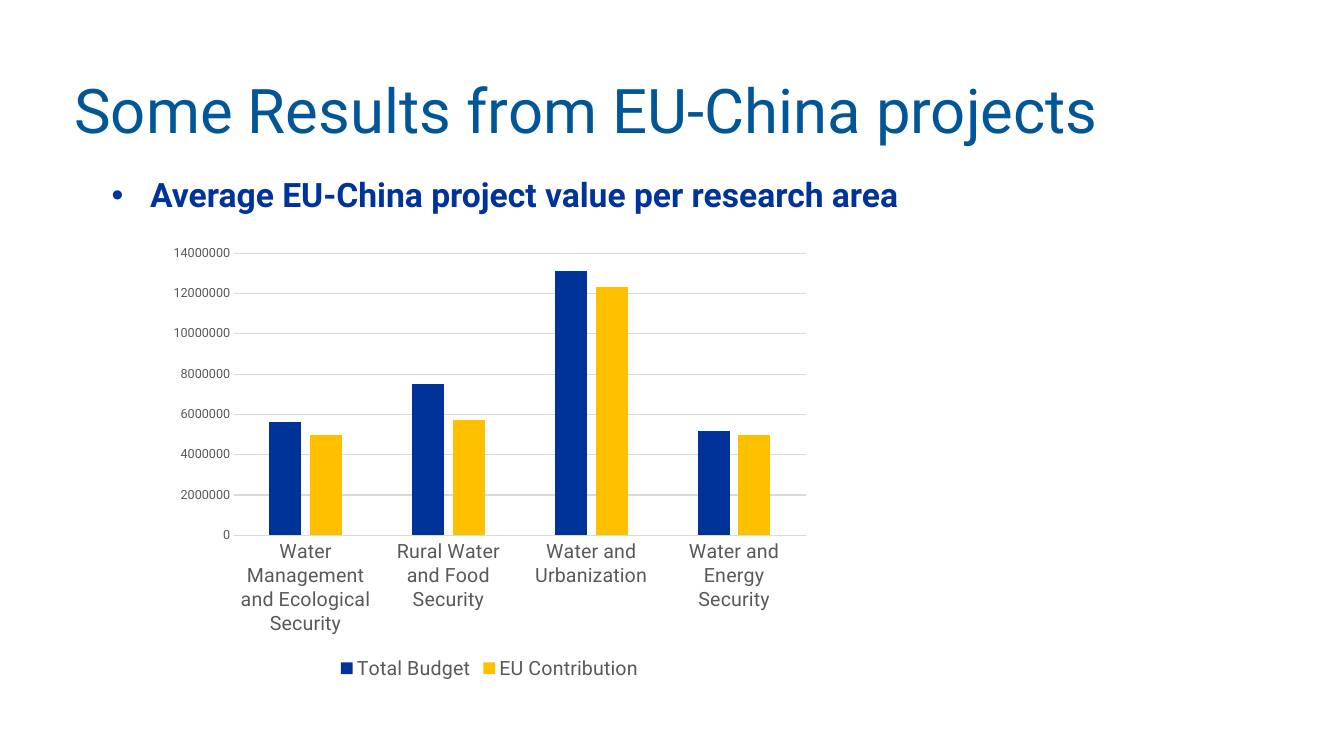
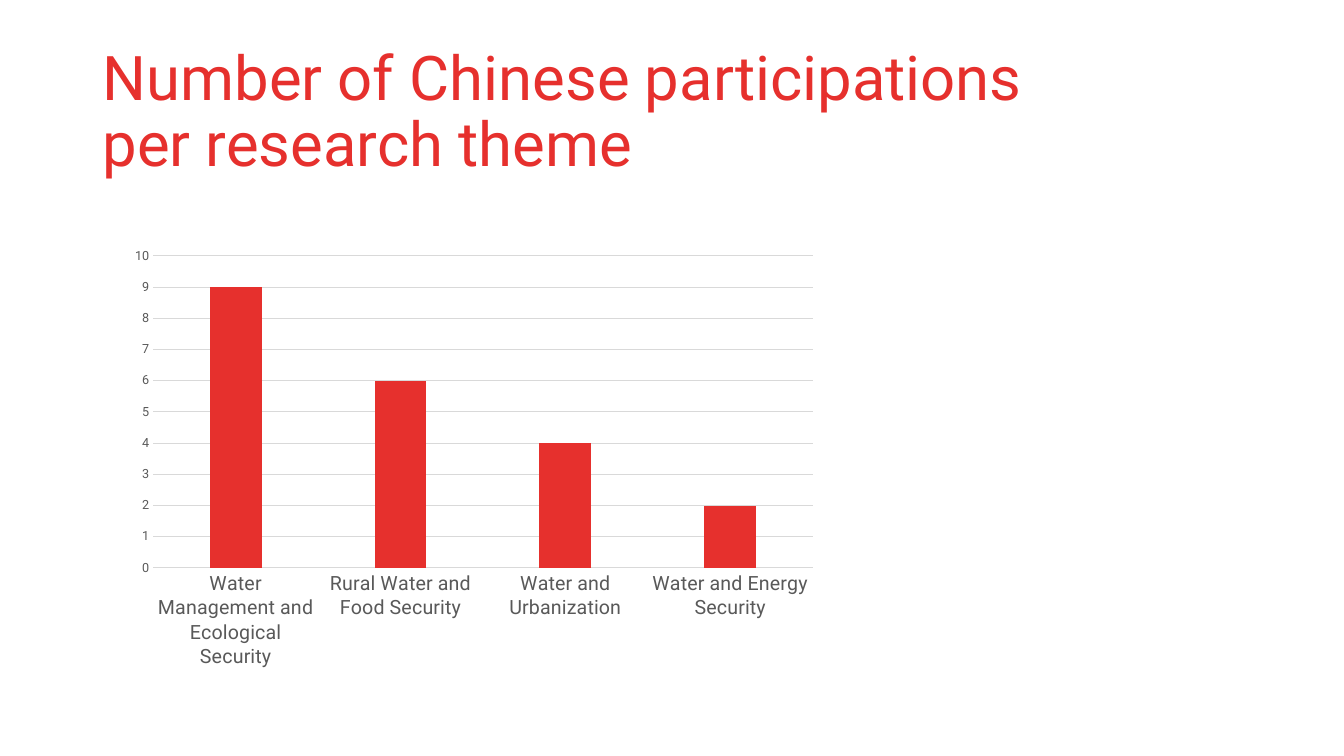
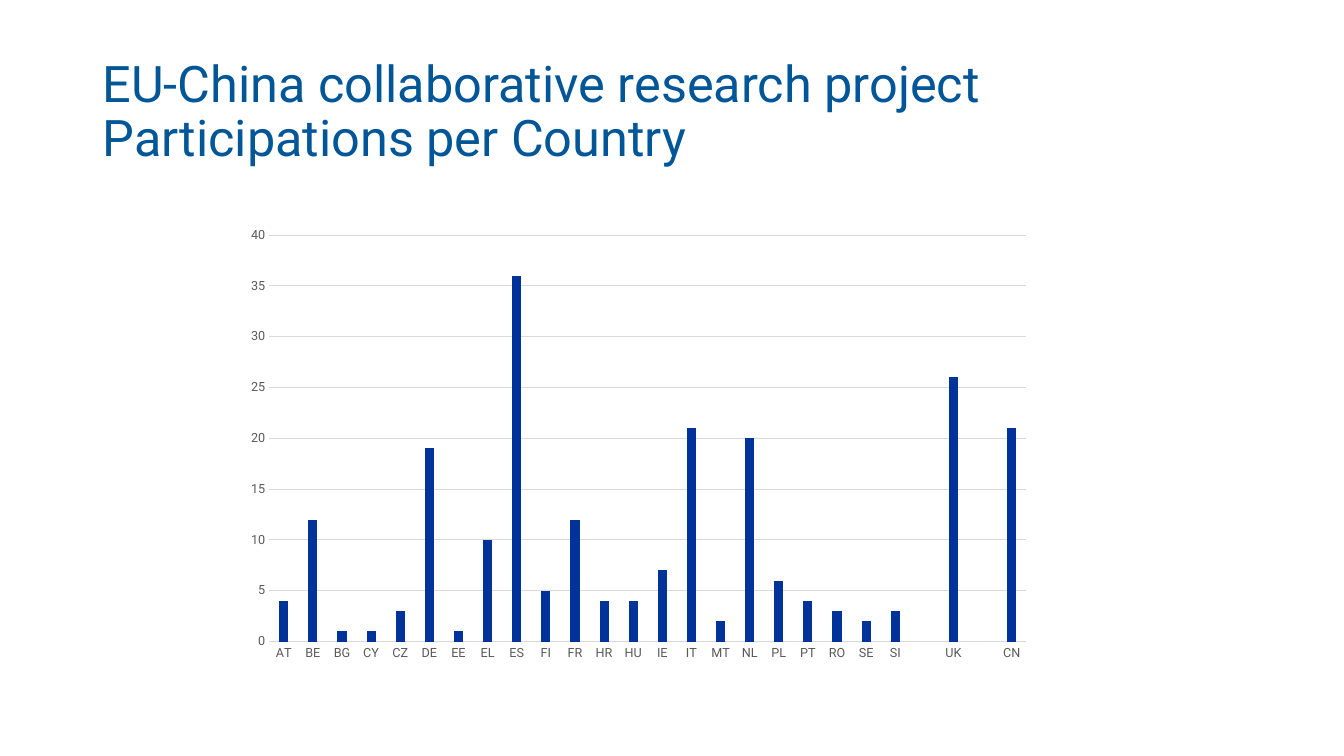
import pptx
import pptx.chart.data
import pptx.dml.color
import pptx.enum.chart
import pptx.enum.text
import pptx.oxml
import pptx.oxml.ns
import pptx.util

PX = 9144  # EMU in one px, 100 px to the inch
FONT = "Roboto"
COLOURS = {
    "title": "005697",
    "blue": "003399",
    "yellow": "FFC000",
    "red": "E6302D",
    "label": "595959",
    "grid": "D9D9D9",
    "text": "000000",
}
THEMES = [
    "Water Management and Ecological Security",
    "Rural Water and Food Security",
    "Water and Urbanization",
    "Water and Energy Security",
]
COUNTRIES = [
    ("AT", 4), ("BE", 12), ("BG", 1), ("CY", 1), ("CZ", 3), ("DE", 19),
    ("EE", 1), ("EL", 10), ("ES", 36), ("FI", 5), ("FR", 12), ("HR", 4),
    ("HU", 4), ("IE", 7), ("IT", 21), ("MT", 2), ("NL", 20), ("PL", 6),
    ("PT", 4), ("RO", 3), ("SE", 2), ("SI", 3), ("", None), ("UK", 26),
    ("", None), ("CN", 21),
]
TITLE_BOX = (92, 40, 1150, 145)


def to_emu(box):
    return [length * PX for length in box]


def rgb(name):
    return pptx.dml.color.RGBColor.from_string(COLOURS[name])


def set_all(target, values):
    for name, value in values.items():
        setattr(target, name, value)


def set_font(font, size, colour, bold=False):
    set_all(font, {"name": FONT, "size": pptx.util.Pt(size), "bold": bold})
    font.color.rgb = rgb(colour)


def set_line(line, colour):
    line.color.rgb = rgb(colour)
    line.width = pptx.util.Pt(0.75)


def add_text(page, box, text, size, colour, bold=False, frame_format=None):
    """Add a one-paragraph text box and return its paragraph."""
    frame = page.shapes.add_textbox(*to_emu(box)).text_frame
    set_all(frame, {"word_wrap": True, **(frame_format or {})})
    para = frame.paragraphs[0]
    para.text = text
    for span in para.runs:
        set_font(span.font, size, colour, bold)
    return para


def add_title(page, text, colour="title", size=44, box=TITLE_BOX):
    middle = {"vertical_anchor": pptx.enum.text.MSO_ANCHOR.MIDDLE}
    para = add_text(page, box, text, size, colour, frame_format=middle)
    para.line_spacing = 0.9


def add_bullet(page, box, text):
    fit = {"auto_size": pptx.enum.text.MSO_AUTO_SIZE.SHAPE_TO_FIT_TEXT}
    para = add_text(page, box, text, 24, "blue", True, fit)
    properties = para._p.get_or_add_pPr()
    properties.set("marL", str(38 * PX))
    properties.set("indent", str(-38 * PX))
    namespace = pptx.oxml.ns.nsdecls("a")
    for markup in ('<a:buFont {} typeface="Arial"/>', '<a:buChar {} char="•"/>'):
        properties.append(pptx.oxml.parse_xml(markup.format(namespace)))


def add_columns(page, box, categories, series, top, step, label_size=14):
    """Add a column chart; series holds (name, values, colour) and top ends the scale."""
    chart_data = pptx.chart.data.CategoryChartData()
    chart_data.categories = categories
    for name, values, _ in series:
        chart_data.add_series(name, values)
    kind = pptx.enum.chart.XL_CHART_TYPE.COLUMN_CLUSTERED
    chart = page.shapes.add_chart(kind, *to_emu(box), chart_data).chart
    set_all(chart, {"has_title": False, "has_legend": len(series) > 1})
    set_font(chart.font, 10, "text")

    plot = chart.plots[0]
    set_all(plot, {"gap_width": 219, "overlap": -27, "vary_by_categories": False})
    for columns, (_, _, colour) in zip(plot.series, series):
        columns.format.fill.solid()
        columns.format.fill.fore_color.rgb = rgb(colour)

    no_tick = pptx.enum.chart.XL_TICK_MARK.NONE
    for axis, size in ((chart.category_axis, label_size), (chart.value_axis, 9)):
        set_all(axis, {"major_tick_mark": no_tick, "minor_tick_mark": no_tick})
        set_font(axis.tick_labels.font, size, "label")
    set_line(chart.category_axis.format.line, "grid")
    scale = {"minimum_scale": 0, "maximum_scale": top, "major_unit": step,
             "has_major_gridlines": True}
    set_all(chart.value_axis, scale)
    chart.value_axis.format.line.fill.background()
    set_line(chart.value_axis.major_gridlines.format.line, "grid")

    if chart.has_legend:
        bottom = pptx.enum.chart.XL_LEGEND_POSITION.BOTTOM
        set_all(chart.legend, {"position": bottom, "include_in_layout": False})
        set_font(chart.legend.font, 14, "label")


def build_project_value(page):
    add_title(page, "Some Results from EU-China projects", box=(64, 40, 1054, 145))
    series = [
        ("Total Budget", [5600000, 7500000, 13100000, 5200000], "blue"),
        ("EU Contribution", [5000000, 5700000, 12300000, 5000000], "yellow"),
    ]
    add_columns(page, (159, 235, 653, 444), THEMES, series, 14000000, 2000000)
    add_bullet(page, (101, 168, 869, 50),
               "Average EU-China project value per research area")


def build_theme_participations(page):
    add_title(page, "Number of Chinese participations \vper research theme", "red")
    series = [("Series 1", [9, 6, 4, 2], "red")]
    add_columns(page, (120, 238, 700, 434), THEMES, series, 10, 1)


def build_country_participations(page):
    add_title(page, "EU-China collaborative research project Participations per Country",
              size=36)
    names, counts = zip(*COUNTRIES)
    series = [("Series 1", counts, "blue")]
    add_columns(page, (233, 217, 801, 447), names, series, 40, 5, label_size=9)


def main():
    deck = pptx.Presentation()
    set_all(deck, {"slide_width": 1333 * PX, "slide_height": 750 * PX})
    blank = deck.slide_layouts[6]
    for build in (build_project_value, build_theme_participations,
                  build_country_participations):
        build(deck.slides.add_slide(blank))
    deck.save("out.pptx")


if __name__ == "__main__":
    main()
